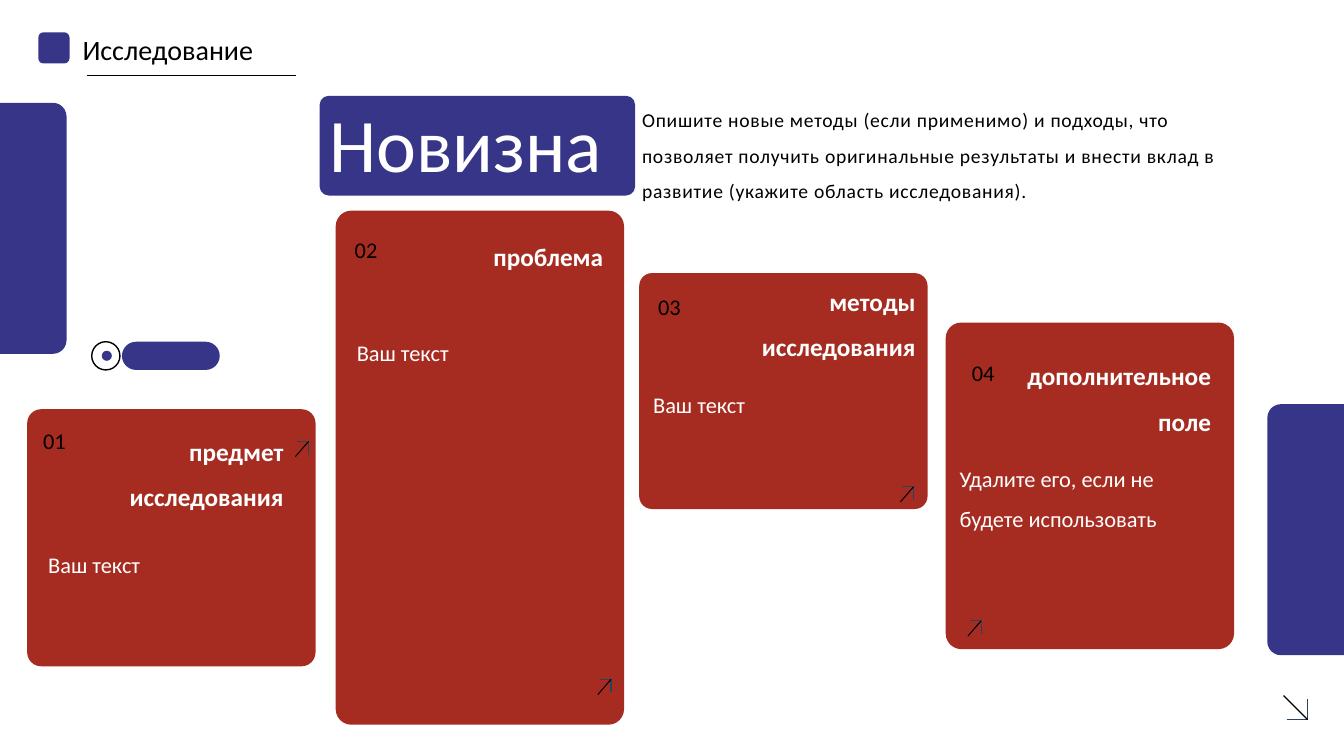
from lxml.etree import SubElement
from pptx import Presentation
from pptx.dml.color import RGBColor
from pptx.enum.shapes import MSO_CONNECTOR, MSO_SHAPE
from pptx.enum.text import MSO_ANCHOR, MSO_AUTO_SIZE, PP_ALIGN
from pptx.oxml.ns import qn
from pptx.util import Emu, Pt

SCALE = 9144  # EMU in one px, 100 px to the inch
BLUE = RGBColor(0x37, 0x35, 0x88)
RED = RGBColor(0xA6, 0x2C, 0x21)
STEEL = RGBColor(0x28, 0x44, 0x5D)
WHITE = RGBColor(0xFF, 0xFF, 0xFF)
BLACK = RGBColor(0, 0, 0)

BODY = {"line_spacing": 1.5, "space_before": Pt(10)}
HEAD = {**BODY, "alignment": PP_ALIGN.RIGHT}

# box, number spot, heading box, heading, text box, text, arrow corner
CARDS = [
    ((27, 406, 286, 255), (33, 406), (91, 413, 200, 114), "предмет исследования",
     (38, 529, 232, 37), "Ваш текст", (306, 438)),
    ((333, 209, 286, 510), (342, 216), (408, 219, 200, 114), "проблема",
     (344, 318, 232, 37), "Ваш текст", (606, 674)),
    ((634, 271, 286, 234), (643, 273), (718, 264, 200, 114), "методы исследования",
     (638, 370, 232, 37), "Ваш текст", (906, 483)),
    ((938, 320, 286, 324), (954, 338), (983, 338, 228, 114), "дополнительное поле",
     (942, 443, 232, 160), "Удалите его, если не будете использовать", (973, 616)),
]


def px(*nums):
    return [Emu(round(n) * SCALE) for n in nums]


class Deck:
    """Holds the font and the slide being drawn."""

    def __init__(self, font):
        self.font = font
        self.prs = Presentation()
        self.prs.slide_width, self.prs.slide_height = px(1333, 750)
        self.slide = self.prs.slides.add_slide(self.prs.slide_layouts[6])
        self.shapes = self.slide.shapes

    def panel(self, box, fill, adj=0.054, edge=None):
        shape = self.shapes.add_shape(MSO_SHAPE.ROUNDED_RECTANGLE, *px(*box))
        shape.shadow.inherit = False
        shape.adjustments[0] = adj
        shape.fill.solid()
        shape.fill.fore_color.rgb = fill
        if edge is None:
            shape.line.fill.background()
        else:
            self.stroke(shape, edge, 1)

    def stroke(self, shape, color, width):
        shape.line.color.rgb = color
        shape.line.width = Pt(width)

    def text(self, box, words, size, color=BLACK, bold=False, para=None, frame=None, track=0):
        """Add a wrapped text box; track is letter spacing in points."""
        body = self.shapes.add_textbox(*px(*box)).text_frame
        first = body.paragraphs[0]
        run = first.add_run()
        run.text = words
        run.font.color.rgb = color
        looks = {"name": self.font, "size": Pt(size), "bold": bold}
        formats = (body, {"word_wrap": True, **(frame or {})}), (first, para or {}), (run.font, looks)
        for target, values in formats:
            for key, value in values.items():
                setattr(target, key, value)
        if track:
            run._r.get_or_add_rPr().set("spc", str(round(track * 100)))

    def rule(self, x1, y1, x2, y2, width):
        line = self.shapes.add_connector(MSO_CONNECTOR.STRAIGHT, *px(x1, y1, x2, y2))
        self.stroke(line, BLACK, width)
        SubElement(line._element.spPr, qn("a:effectLst"))

    def arrow(self, x, y, wide=11, high=13, width=0.75):
        """Draw an arrow with its tip at x, y; a negative high points down."""
        pen = self.shapes.build_freeform(x - wide, y, scale=SCALE)
        pen.add_line_segments([(x, y), (x, y + high)], close=False)
        hook = pen.convert_to_shape()
        hook.shadow.inherit = False
        hook.fill.background()
        self.stroke(hook, STEEL, width)
        self.rule(x - 1.15 * wide, y + 1.15 * high, x, y, width)

    def card(self, num, box, spot, top, head, area, words, tip):
        self.panel(box, RED)
        self.text(top, head, 18, WHITE, True, HEAD)
        self.text((*spot, 57, 114), f"{num:02}", 16, para=BODY)
        self.text(area, words, 16, WHITE, para=BODY)
        self.arrow(*tip)


def main():
    deck = Deck("Calibri")
    middle = {"vertical_anchor": MSO_ANCHOR.MIDDLE}

    deck.panel((38, 32, 31, 31), BLUE, 0.167)
    deck.text((72, 34, 265, 29), "Исследование", 20, frame=middle)
    deck.rule(86, 75, 294, 75, 0.5)

    deck.panel((317, 95, 313, 99), BLUE, 0.092)
    deck.text((317, 98, 438, 98), "Новизна", 54, WHITE, para={"line_spacing": 0.9}, frame=middle)
    deck.text((627, 91, 630, 116),
              "Опишите новые методы (если применимо) и подходы, что позволяет получить "
              "оригинальные результаты и внести вклад в развитие (укажите область исследования).",
              14, para={"line_spacing": 1.5},
              frame={"auto_size": MSO_AUTO_SIZE.SHAPE_TO_FIT_TEXT}, track=0.5)

    for num, card in enumerate(CARDS, 1):
        deck.card(num, *card)

    for left, top in ((-220, 102), (1257, 401)):
        deck.panel((left, top, 286, 249), BLUE)

    deck.panel((121, 339, 97, 28), BLUE, 0.5)
    deck.panel((91, 339, 28, 28), WHITE, 0.5, BLACK)
    deck.panel((101, 348, 10, 10), BLUE, 0.5)
    deck.arrow(1297, 714, 21, -21, 1)

    deck.prs.save("out.pptx")


if __name__ == "__main__":
    main()
